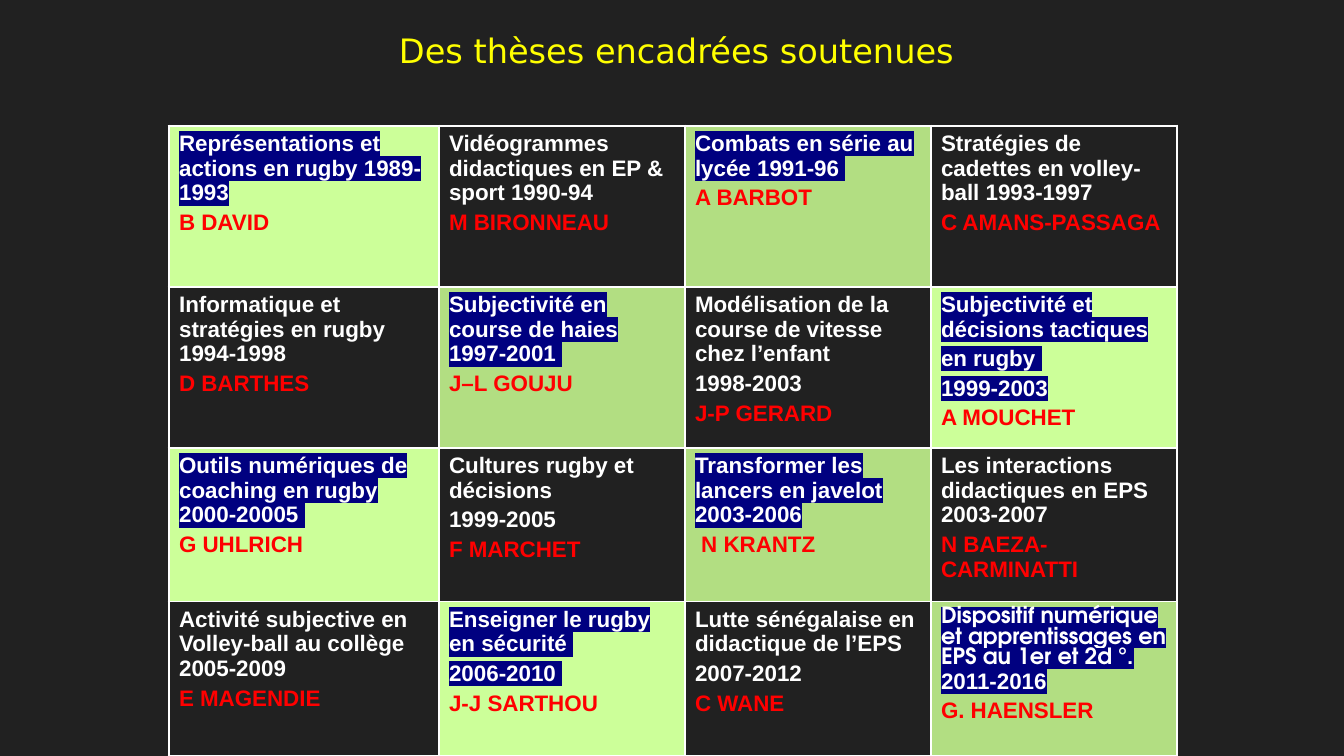
"""Build the slide listing the supervised doctoral theses."""
from lxml import etree
from pptx import Presentation
from pptx.dml.color import RGBColor
from pptx.enum.text import MSO_ANCHOR, PP_ALIGN
from pptx.oxml.ns import qn
from pptx.util import Pt

TITLE = "Des thèses encadrées soutenues"
THESES = [
    [
        ("Représentations et actions en rugby 1989-1993", "B DAVID"),
        ("Vidéogrammes didactiques en EP & sport 1990-94", "M BIRONNEAU"),
        ("Combats en série au lycée 1991-96 ", "A BARBOT"),
        ("Stratégies de cadettes en volley-ball 1993-1997", "C AMANS-PASSAGA"),
    ],
    [
        ("Informatique et stratégies en rugby 1994-1998", "D BARTHES"),
        ("Subjectivité en course de haies 1997-2001 ", "J–L GOUJU"),
        ("Modélisation de la course de vitesse chez l’enfant", "1998-2003", "J-P GERARD"),
        ("Subjectivité et décisions tactiques", "en rugby ", "1999-2003", "A MOUCHET"),
    ],
    [
        ("Outils numériques de coaching en rugby 2000-20005 ", "G UHLRICH"),
        ("Cultures rugby et décisions", "1999-2005", "F MARCHET"),
        ("Transformer les lancers en javelot 2003-2006", " N KRANTZ"),
        ("Les interactions didactiques en EPS 2003-2007", "N BAEZA-CARMINATTI"),
    ],
    [
        ("Activité subjective en Volley-ball au collège 2005-2009", "E MAGENDIE"),
        ("Enseigner le rugby en sécurité ", "2006-2010 ", "J-J SARTHOU"),
        ("Lutte sénégalaise en didactique de l’EPS", "2007-2012", "C WANE"),
        (("Dispositif numérique et apprentissages en EPS au 1er et 2d °. ", "2011-2016"),
         "G. HAENSLER"),
    ],
]
BRIGHT_CELLS = {(0, 0), (1, 3), (2, 0), (3, 1)}
COLORS = {
    "background": "212121",
    "title": "FFFF00",
    "text": "FFFFFF",
    "author": "FF0000",
    "highlight": "000080",
    "bright": "CCFF99",
    "soft": "B2DE82",
    "border": "FFFFFF",
}
TEXT_FONT, TITLE_FONT, DISPLAY_FONT = "Arial", "DejaVu Sans", "TeX Gyre Adventor"
CENTER, TOP = PP_ALIGN.CENTER, MSO_ANCHOR.TOP

EMU_PER_PX = 914400 / 100.8
SLIDE_SIZE = (1344, 756)
TITLE_BOX = (252, 25, 849, 50)
TABLE_ORIGIN = (169, 126)
COLUMN_WIDTHS = [270, 246, 246, 246]
ROW_HEIGHTS = [161, 161, 154, 154]
INNER_BORDER, OUTER_BORDER = Pt(1), Pt(2.25)
TITLE_ONLY_LAYOUT = 5


def px(length):
    return round(length * EMU_PER_PX)


def rgb(name):
    return RGBColor.from_string(COLORS[name])


def format_run(run, font_name, size, color, bold=False, highlighted=False):
    run.font.name = font_name
    run.font.size = Pt(size)
    run.font.bold = bold
    run.font.color.rgb = rgb(color)
    if highlighted:
        highlight = etree.Element(qn("a:highlight"))
        etree.SubElement(highlight, qn("a:srgbClr"), val=COLORS["highlight"])
        run.font._element.find(qn("a:latin")).addprevious(highlight)


def set_borders(cell, row, column):
    outer_sides = (column == 0, column == len(COLUMN_WIDTHS) - 1,
                   row == 0, row == len(ROW_HEIGHTS) - 1)
    properties = cell._tc.get_or_add_tcPr()
    for index, (side, outer) in enumerate(zip("LRTB", outer_sides)):
        width = OUTER_BORDER if outer else INNER_BORDER
        line = etree.Element(qn(f"a:ln{side}"), w=str(width))
        fill = etree.SubElement(line, qn("a:solidFill"))
        etree.SubElement(fill, qn("a:srgbClr"), val=COLORS["border"])
        properties.insert(index, line)


def fill_cell(cell, paragraphs, row, column):
    highlighted = (row + column) % 2 == 0
    if highlighted:
        cell.fill.solid()
        cell.fill.fore_color.rgb = rgb("bright" if (row, column) in BRIGHT_CELLS else "soft")
    else:
        cell.fill.background()
    set_borders(cell, row, column)
    text_frame = cell.text_frame
    for index, content in enumerate(paragraphs):
        paragraph = text_frame.add_paragraph() if index else text_frame.paragraphs[0]
        paragraph.space_before = Pt(3.4 if index else 0)
        is_author = index == len(paragraphs) - 1
        pieces = (content,) if isinstance(content, str) else content
        for position, piece in enumerate(pieces):
            run = paragraph.add_run()
            run.text = piece
            font_name = DISPLAY_FONT if position < len(pieces) - 1 else TEXT_FONT
            format_run(run, font_name, 16, "author" if is_author else "text",
                       bold=True, highlighted=highlighted and not is_author)


def add_title(slide):
    title = slide.shapes.title
    title.left, title.top, title.width, title.height = map(px, TITLE_BOX)
    text_frame = title.text_frame
    text_frame.text = TITLE
    text_frame.word_wrap = True
    text_frame.vertical_anchor = TOP
    paragraph = text_frame.paragraphs[0]
    paragraph.alignment = CENTER
    paragraph.line_spacing = 1.0
    paragraph.space_before = Pt(0)
    format_run(paragraph.runs[0], TITLE_FONT, 24, "title")


def add_theses_table(slide):
    table = slide.shapes.add_table(
        len(ROW_HEIGHTS), len(COLUMN_WIDTHS), *map(px, TABLE_ORIGIN),
        px(sum(COLUMN_WIDTHS)), px(sum(ROW_HEIGHTS))).table
    table.first_row = table.horz_banding = False
    for column, width in zip(table.columns, COLUMN_WIDTHS):
        column.width = px(width)
    for row, height in zip(table.rows, ROW_HEIGHTS):
        row.height = px(height)
    for row, theses in enumerate(THESES):
        for column, paragraphs in enumerate(theses):
            fill_cell(table.cell(row, column), paragraphs, row, column)


def main():
    presentation = Presentation()
    presentation.slide_width, presentation.slide_height = map(px, SLIDE_SIZE)
    slide = presentation.slides.add_slide(presentation.slide_layouts[TITLE_ONLY_LAYOUT])
    slide.background.fill.solid()
    slide.background.fill.fore_color.rgb = rgb("background")
    add_title(slide)
    add_theses_table(slide)
    presentation.save("out.pptx")


if __name__ == "__main__":
    main()
